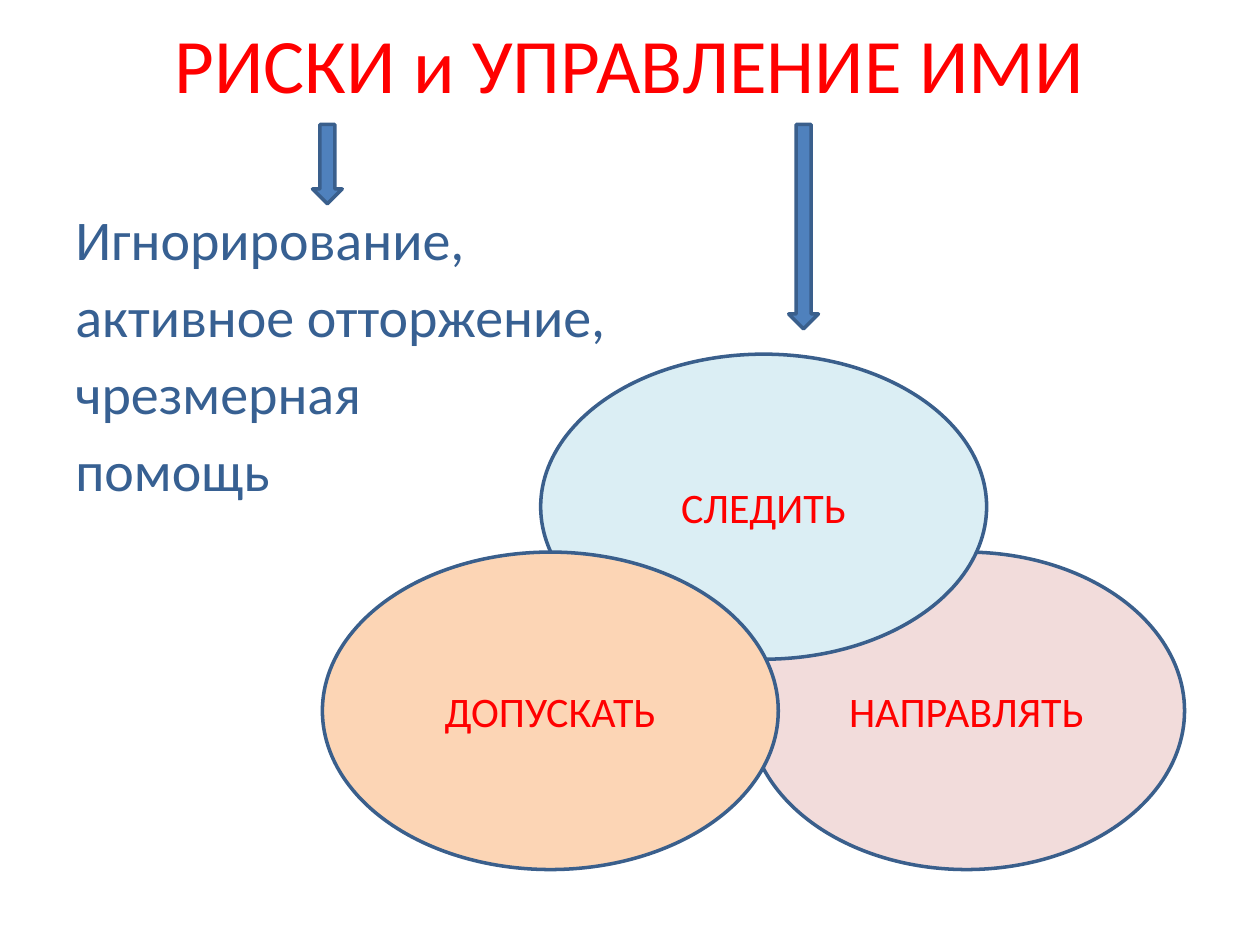
from pptx import Presentation
from pptx.dml.color import RGBColor
from pptx.enum.shapes import MSO_SHAPE
from pptx.enum.text import MSO_ANCHOR, PP_ALIGN
from pptx.util import Cm, Pt

RED = RGBColor(0xFF, 0x00, 0x00)
NAVY = RGBColor(0x37, 0x60, 0x92)
BLUE = RGBColor(0x4F, 0x81, 0xBD)
OUTLINE = RGBColor(0x3A, 0x5F, 0x8C)
PINK = RGBColor(0xF2, 0xDC, 0xDB)
AQUA = RGBColor(0xDB, 0xEE, 0xF4)
PEACH = RGBColor(0xFC, 0xD5, 0xB5)


def write(tf, text, size, color, align, anchor):
    """Fill a text frame and format every paragraph alike."""
    tf.text = text
    tf.word_wrap = True
    tf.vertical_anchor = anchor
    for p in tf.paragraphs:
        p.alignment = align
        for r in p.runs:
            r.font.name = "Calibri"
            r.font.size = Pt(size)
            r.font.color.rgb = color


def add_outlined(s, kind, x, y, w, h, fill):
    """Add a filled preset shape with the common outline."""
    sp = s.shapes.add_shape(kind, Cm(x), Cm(y), Cm(w), Cm(h))
    sp.shadow.inherit = False
    sp.fill.solid()
    sp.fill.fore_color.rgb = fill
    sp.line.color.rgb = OUTLINE
    sp.line.width = Pt(2)
    return sp


def add_title(s, x, y, w, h):
    """Place the centred heading."""
    tf = s.shapes.add_textbox(Cm(x), Cm(y), Cm(w), Cm(h)).text_frame
    write(tf, "РИСКИ и УПРАВЛЕНИЕ ИМИ", 44, RED, PP_ALIGN.CENTER, MSO_ANCHOR.MIDDLE)


def add_risks(s, x, y, w, h):
    """Place the list of risks below the left arrow."""
    tf = s.shapes.add_textbox(Cm(x), Cm(y), Cm(w), Cm(h)).text_frame
    risks = ["Игнорирование,", "активное отторжение,", "чрезмерная", "помощь"]
    write(tf, "\n".join(risks), 32, NAVY, PP_ALIGN.LEFT, MSO_ANCHOR.TOP)
    tf.margin_top = Cm(1.78)
    for p in tf.paragraphs:
        p.space_after = Pt(5.6)


def add_actions(s, x, y, w, h):
    """Place three overlapping ellipses, two at the foot of the box and one at its top."""
    low_h, top_h = 6.4, 6.15
    low_y = y + h - low_h
    for text, left, top, width, height, fill in (
        ("НАПРАВЛЯТЬ", x + w - 8.79, low_y, 8.79, low_h, PINK),
        ("СЛЕДИТЬ", x + 4.4, y, 8.99, top_h, AQUA),
        ("ДОПУСКАТЬ", x, low_y, 9.19, low_h, PEACH),
    ):
        sp = add_outlined(s, MSO_SHAPE.OVAL, left, top, width, height, fill)
        write(sp.text_frame, text, 24, RED, PP_ALIGN.CENTER, MSO_ANCHOR.MIDDLE)


def add_arrows(s, x, y, w, h):
    """Place a short arrow at the left and a full-height arrow at the right of the box."""
    width = 0.6
    for left, height in ((x, 1.6), (x + w - width, h)):
        add_outlined(s, MSO_SHAPE.DOWN_ARROW, left, y, width, height, BLUE)


def main():
    """Build the slide and save it."""
    prs = Presentation()
    prs.slide_width, prs.slide_height = Cm(25.4), Cm(19.05)
    s = prs.slides.add_slide(prs.slide_layouts[6])
    add_title(s, 1.27, 0, 22.86, 2.51)
    add_risks(s, 1.27, 2.34, 22.86, 15.6)
    add_actions(s, 6.5, 7.14, 17.38, 10.39)
    add_arrows(s, 6.3, 2.51, 10.2, 4.12)
    prs.save("out.pptx")


if __name__ == "__main__":
    main()
